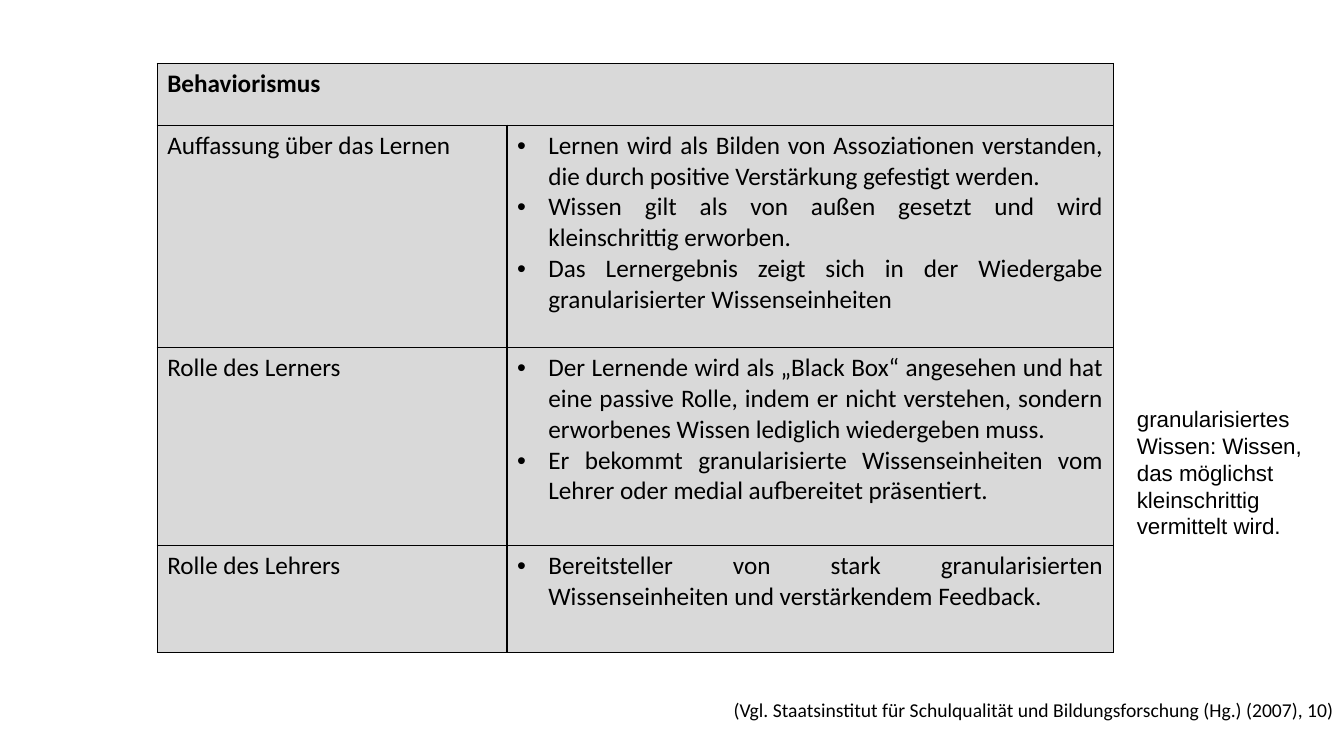
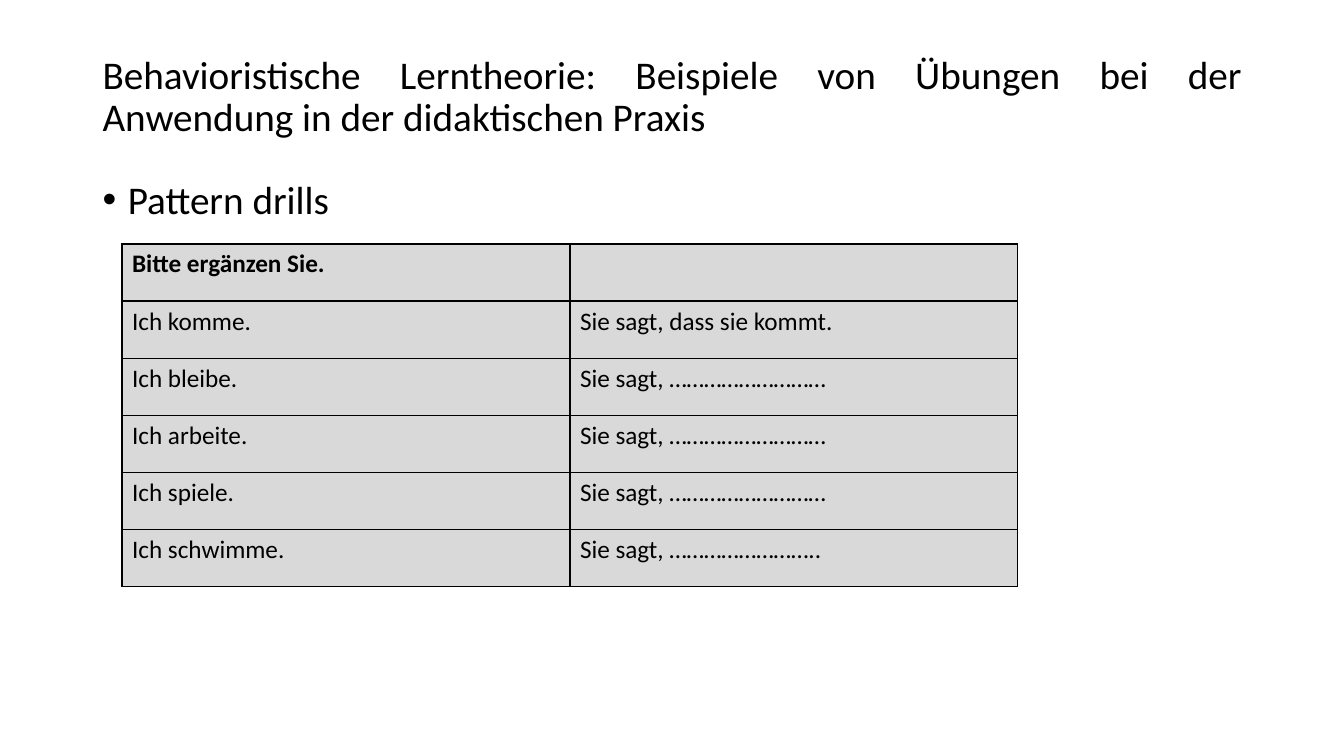
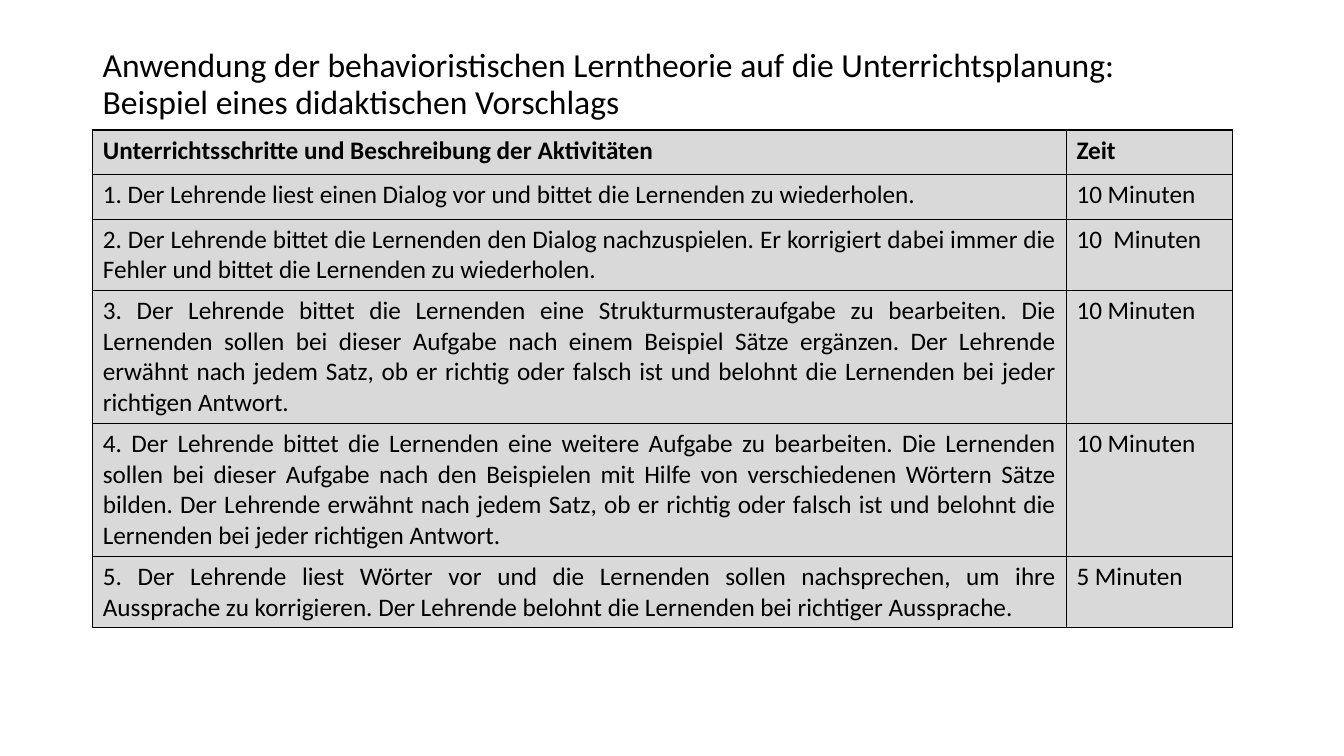
from dataclasses import dataclass

from lxml import etree
from pptx import Presentation
from pptx import util as u
from pptx.dml.color import RGBColor
from pptx.enum import text
from pptx.oxml import ns

JUSTIFY = text.PP_ALIGN.JUSTIFY
LEFT = text.PP_ALIGN.LEFT
RIGHT = text.PP_ALIGN.RIGHT
MIDDLE = text.MSO_ANCHOR.MIDDLE
GRID = 100  # columns and rows on a slide


@dataclass(frozen=True)
class Theme:
    ink: str = "000000"
    cell: str = "D9D9D9"
    font: str = "Calibri"
    note_font: str = "Arial"
    heading: int = 28
    small_heading: int = 24
    table: int = 18
    note: int = 16
    source: int = 14
    border: int = 1
    tight: float = 0.9
    margin: float = 6.9
    content: float = 86.25


class Deck:
    """Holds the theme, the presentation and the slide being filled."""

    def __init__(self, theme):
        self.theme = theme
        self.presentation = Presentation()
        self.presentation.slide_width = u.Inches(40 / 3)
        self.presentation.slide_height = u.Inches(7.5)
        self.slide = None

    def add_slide(self):
        self.slide = self.presentation.slides.add_slide(self.presentation.slide_layouts[6])

    def columns(self, count):
        return u.Emu(round(self.presentation.slide_width * count / GRID))

    def rows(self, count):
        return u.Emu(round(self.presentation.slide_height * count / GRID))

    def fill_paragraph(self, paragraph, words, size, font=None, bold=False, align=LEFT, indent=0):
        """Set words and style; an indent in inches gives a hanging bullet."""
        paragraph.text = words
        paragraph.alignment = align
        if indent:
            properties = paragraph._p.get_or_add_pPr()
            properties.set("marL", str(u.Inches(indent)))
            properties.set("indent", str(-u.Inches(indent)))
            etree.SubElement(properties, ns.qn("a:buFont"), typeface=self.theme.note_font)
            etree.SubElement(properties, ns.qn("a:buChar"), char="•")
        paragraph.font.name = font or self.theme.font
        paragraph.font.size = u.Pt(size)
        paragraph.font.bold = bold
        paragraph.font.color.rgb = RGBColor.from_string(self.theme.ink)

    def text_box(self, left, top, width, height, words, size, spacing=None, anchor=None, **style):
        shape = self.slide.shapes.add_textbox(
            self.columns(left), self.rows(top), self.columns(width), self.rows(height))
        frame = shape.text_frame
        frame.word_wrap = True
        frame.vertical_anchor = anchor
        paragraph = frame.paragraphs[0]
        self.fill_paragraph(paragraph, words, size, **style)
        paragraph.line_spacing = spacing
        return paragraph

    def title(self, top, height, words, size, align=LEFT):
        theme = self.theme
        self.text_box(theme.margin, top, theme.content, height, words, size,
                      spacing=theme.tight, anchor=MIDDLE, align=align)

    def bullet(self, top, height, words):
        theme = self.theme
        paragraph = self.text_box(theme.margin, top, theme.content, height, words,
                                  theme.heading, spacing=theme.tight, indent=0.25)
        paragraph.space_before = u.Pt(10)

    def fill_cell(self, cell, content, bold, align):
        """Style a cell; a list as content becomes bulleted paragraphs."""
        properties = cell._tc.get_or_add_tcPr()
        for side in ("lnL", "lnR", "lnT", "lnB"):
            line = etree.SubElement(properties, ns.qn(f"a:{side}"),
                                    w=str(u.Pt(self.theme.border)))
            fill = etree.SubElement(line, ns.qn("a:solidFill"))
            etree.SubElement(fill, ns.qn("a:srgbClr"), val=self.theme.ink)
        cell.fill.solid()
        cell.fill.fore_color.rgb = RGBColor.from_string(self.theme.cell)

        bulleted = isinstance(content, list)
        frame = cell.text_frame
        for index, words in enumerate(content if bulleted else [content]):
            paragraph = frame.add_paragraph() if index else frame.paragraphs[0]
            self.fill_paragraph(paragraph, words, self.theme.table, bold=bold, align=align,
                                indent=0.31 if bulleted else 0)

    def table(self, left, top, widths, heights, records, align=JUSTIFY):
        """Draw a table with a bold first row; a short record spans the full width."""
        frame = self.slide.shapes.add_table(
            len(heights), len(widths), self.columns(left), self.rows(top),
            self.columns(sum(widths)), self.rows(sum(heights)))
        table = frame.table
        table.first_row = table.horz_banding = False
        for column, width in zip(table.columns, widths):
            column.width = self.columns(width)
        for index, (row, height, record) in enumerate(zip(table.rows, heights, records)):
            row.height = self.rows(height)
            cells = list(row.cells)
            if len(record) < len(widths):
                cells[0].merge(cells[-1])
            padded = record + ("",) * (len(widths) - len(record))
            for cell, content in zip(cells, padded):
                self.fill_cell(cell, content, index == 0, align)


def behaviourism_slide(deck):
    theme = deck.theme
    deck.add_slide()
    deck.table(11.7, 8.4, [26.03, 45.1], [8.17, 29.43, 26.17, 14.17], [
        ("Behaviorismus",),
        ("Auffassung über das Lernen", [
            "Lernen wird als Bilden von Assoziationen verstanden, die durch positive "
            "Verstärkung gefestigt werden.",
            "Wissen gilt als von außen gesetzt und wird kleinschrittig erworben.",
            "Das Lernergebnis zeigt sich in der Wiedergabe granularisierter Wissenseinheiten",
        ]),
        ("Rolle des Lerners", [
            "Der Lernende wird als „Black Box“ angesehen und hat eine passive Rolle, indem er "
            "nicht verstehen, sondern erworbenes Wissen lediglich wiedergeben muss.",
            "Er bekommt granularisierte Wissenseinheiten vom Lehrer oder medial aufbereitet "
            "präsentiert.",
        ]),
        ("Rolle des Lehrers", [
            "Bereitsteller von stark granularisierten Wissenseinheiten und verstärkendem "
            "Feedback.",
        ]),
    ])
    deck.text_box(83.85, 52.93, 15.15, 19.33,
                  "granularisiertes Wissen: Wissen, das möglichst kleinschrittig vermittelt wird.",
                  theme.note, font=theme.note_font)
    deck.text_box(50, 91.6, 50, 4.53,
                  "(Vgl. Staatsinstitut für Schulqualität und Bildungsforschung (Hg.) (2007), 10)",
                  theme.source, align=RIGHT)


def drills_slide(deck):
    deck.add_slide()
    deck.title(9.2, 7.47, "Behavioristische Lerntheorie: Beispiele von Übungen bei der Anwendung "
               "in der didaktischen Praxis", deck.theme.heading, align=JUSTIFY)
    deck.bullet(23.2, 63.47, "Pattern drills")
    gap = "Sie sagt, ………………………"
    drills = [
        ("Bitte ergänzen Sie.", ""),
        ("Ich komme.", "Sie sagt, dass sie kommt."),
        ("Ich bleibe.", gap),
        ("Ich arbeite.", gap),
        ("Ich spiele.", gap),
        ("Ich schwimme.", "Sie sagt, …………………….."),
    ]
    deck.table(9.08, 32.27, [33.33] * 2, [7.56] * len(drills), drills, align=LEFT)


def lesson_plan_slide(deck):
    theme = deck.theme
    deck.add_slide()
    deck.title(5.33, 11.87, "Anwendung der behavioristischen Lerntheorie auf die "
               "Unterrichtsplanung: \nBeispiel eines didaktischen Vorschlags",
               theme.small_heading)
    one_line, two_lines, four_lines = 5.9, 9.4, 17.6
    heights = [one_line] * 2 + [two_lines] + [four_lines] * 2 + [two_lines]
    feedback = ("Der Lehrende erwähnt nach jedem Satz, ob er richtig oder falsch ist und belohnt "
                "die Lernenden bei jeder richtigen Antwort.")
    deck.table(theme.margin, 17.2, [72.45, 12.38], heights, [
        ("Unterrichtsschritte und Beschreibung der Aktivitäten", "Zeit"),
        ("1. Der Lehrende liest einen Dialog vor und bittet die Lernenden zu wiederholen.",
         "10 Minuten"),
        ("2. Der Lehrende bittet die Lernenden den Dialog nachzuspielen. Er korrigiert dabei "
         "immer die Fehler und bittet die Lernenden zu wiederholen.", "10  Minuten"),
        ("3. Der Lehrende bittet die Lernenden eine Strukturmusteraufgabe zu bearbeiten. Die "
         "Lernenden sollen bei dieser Aufgabe nach einem Beispiel Sätze ergänzen. " + feedback,
         "10 Minuten"),
        ("4. Der Lehrende bittet die Lernenden eine weitere Aufgabe zu bearbeiten. Die Lernenden "
         "sollen bei dieser Aufgabe nach den Beispielen mit Hilfe von verschiedenen Wörtern "
         "Sätze bilden. " + feedback, "10 Minuten"),
        ("5. Der Lehrende liest Wörter vor und die Lernenden sollen nachsprechen, um ihre "
         "Aussprache zu korrigieren. Der Lehrende belohnt die Lernenden bei richtiger "
         "Aussprache.", "5 Minuten"),
    ])


def main():
    deck = Deck(Theme())
    behaviourism_slide(deck)
    drills_slide(deck)
    lesson_plan_slide(deck)
    deck.presentation.save("out.pptx")


if __name__ == "__main__":
    main()
